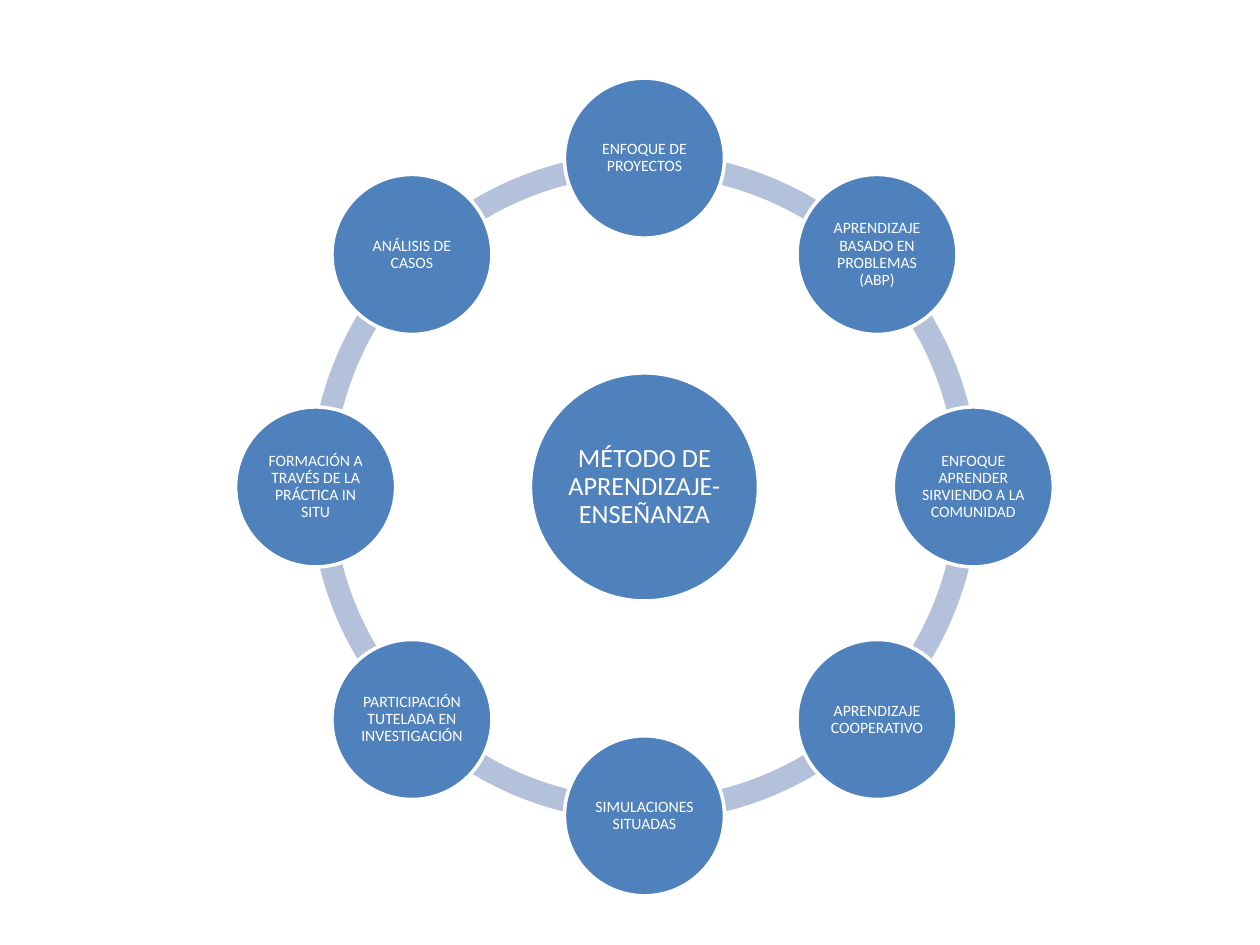
from dataclasses import dataclass
from math import cos, radians, sin

from pptx import Presentation
from pptx.dml.color import RGBColor
from pptx.enum.shapes import MSO_SHAPE
from pptx.enum.text import MSO_ANCHOR, PP_ALIGN
from pptx.shapes.autoshape import Shape
from pptx.slide import Slide
from pptx.util import Inches, Pt

ELLIPSE = MSO_SHAPE.OVAL
BLOCK_ARC = MSO_SHAPE.BLOCK_ARC
MIDDLE = MSO_ANCHOR.MIDDLE
CENTER = PP_ALIGN.CENTER

BLUE = "4F81BD"
PALE_BLUE = "B3C1DB"
WHITE = "FFFFFF"

CENTER_X, CENTER_Y = 5.115, 3.865
ORBIT_RADIUS = 2.61
RING_DIAMETER = 5.31
RING_THICKNESS = 0.034
NODE_DIAMETER = 1.27
HUB_DIAMETER = 1.81
ADJUSTMENT_PER_DEGREE = 0.6

METHODS = (
    "ENFOQUE DE PROYECTOS",
    "APRENDIZAJE BASADO EN PROBLEMAS (ABP)",
    "ENFOQUE APRENDER SIRVIENDO A LA COMUNIDAD",
    "APRENDIZAJE COOPERATIVO",
    "SIMULACIONES SITUADAS",
    "PARTICIPACIÓN TUTELADA EN INVESTIGACIÓN",
    "FORMACIÓN A TRAVÉS DE LA PRÁCTICA IN SITU",
    "ANÁLISIS DE CASOS",
)


@dataclass(frozen=True)
class Circle:
    """A labelled circle given by its centre, in inches."""

    text: str
    x: float
    y: float
    diameter: float
    size: float
    inset: float


def set_fill(shape: Shape, color: str) -> None:
    """Give the shape a solid fill and no shadow."""
    shape.shadow.inherit = False
    shape.fill.solid()
    shape.fill.fore_color.rgb = RGBColor.from_string(color)


def add_centered_shape(slide: Slide, kind: MSO_SHAPE, x: float, y: float,
                       diameter: float, color: str) -> Shape:
    """Add a filled round shape around a centre point."""
    shape = slide.shapes.add_shape(
        kind, Inches(x - diameter / 2), Inches(y - diameter / 2),
        Inches(diameter), Inches(diameter))
    set_fill(shape, color)
    return shape


def write_text(shape: Shape, text: str, *, size: float, inset: float,
               color: str = WHITE, font: str = "Calibri") -> None:
    """Write one centred paragraph into the shape."""
    frame = shape.text_frame
    frame.word_wrap = True
    frame.vertical_anchor = MIDDLE
    frame.margin_left = frame.margin_right = Inches(inset)
    frame.margin_top = frame.margin_bottom = Inches(inset)
    paragraph = frame.paragraphs[0]
    paragraph.alignment = CENTER
    paragraph.line_spacing = 0.9
    run = paragraph.add_run()
    run.text = text
    run.font.name = font
    run.font.size = Pt(size)
    run.font.color.rgb = RGBColor.from_string(color)


def add_ring_segment(slide: Slide, start: float, end: float) -> None:
    """Add one arc of the ring between two angles in degrees."""
    arc = add_centered_shape(
        slide, BLOCK_ARC, CENTER_X, CENTER_Y, RING_DIAMETER, PALE_BLUE)
    arc.line.fill.background()
    arc.adjustments[0] = start % 360 * ADJUSTMENT_PER_DEGREE
    arc.adjustments[1] = end % 360 * ADJUSTMENT_PER_DEGREE
    arc.adjustments[2] = RING_THICKNESS


def add_circle(slide: Slide, circle: Circle) -> None:
    """Add a white-edged circle with its label."""
    shape = add_centered_shape(
        slide, ELLIPSE, circle.x, circle.y, circle.diameter, BLUE)
    shape.line.color.rgb = RGBColor.from_string(WHITE)
    shape.line.width = Pt(2)
    write_text(shape, circle.text, size=circle.size, inset=circle.inset)


def main() -> None:
    """Build the radial cycle slide."""
    presentation = Presentation()
    presentation.slide_width = Inches(10)
    presentation.slide_height = Inches(7.5)
    slide = presentation.slides.add_slide(presentation.slide_layouts[6])

    step = 360 / len(METHODS)
    angles = [index * step - 90 for index in range(len(METHODS))]
    for angle in reversed(angles):
        add_ring_segment(slide, angle - step, angle)

    add_circle(slide, Circle("MÉTODO DE APRENDIZAJE-ENSEÑANZA",
                             CENTER_X, CENTER_Y, HUB_DIAMETER, 15, 0.02))
    for method, angle in zip(METHODS, angles):
        x = CENTER_X + ORBIT_RADIUS * cos(radians(angle))
        y = CENTER_Y + ORBIT_RADIUS * sin(radians(angle))
        add_circle(slide, Circle(method, x, y, NODE_DIAMETER, 9, 0.01))

    presentation.save("out.pptx")


if __name__ == "__main__":
    main()
